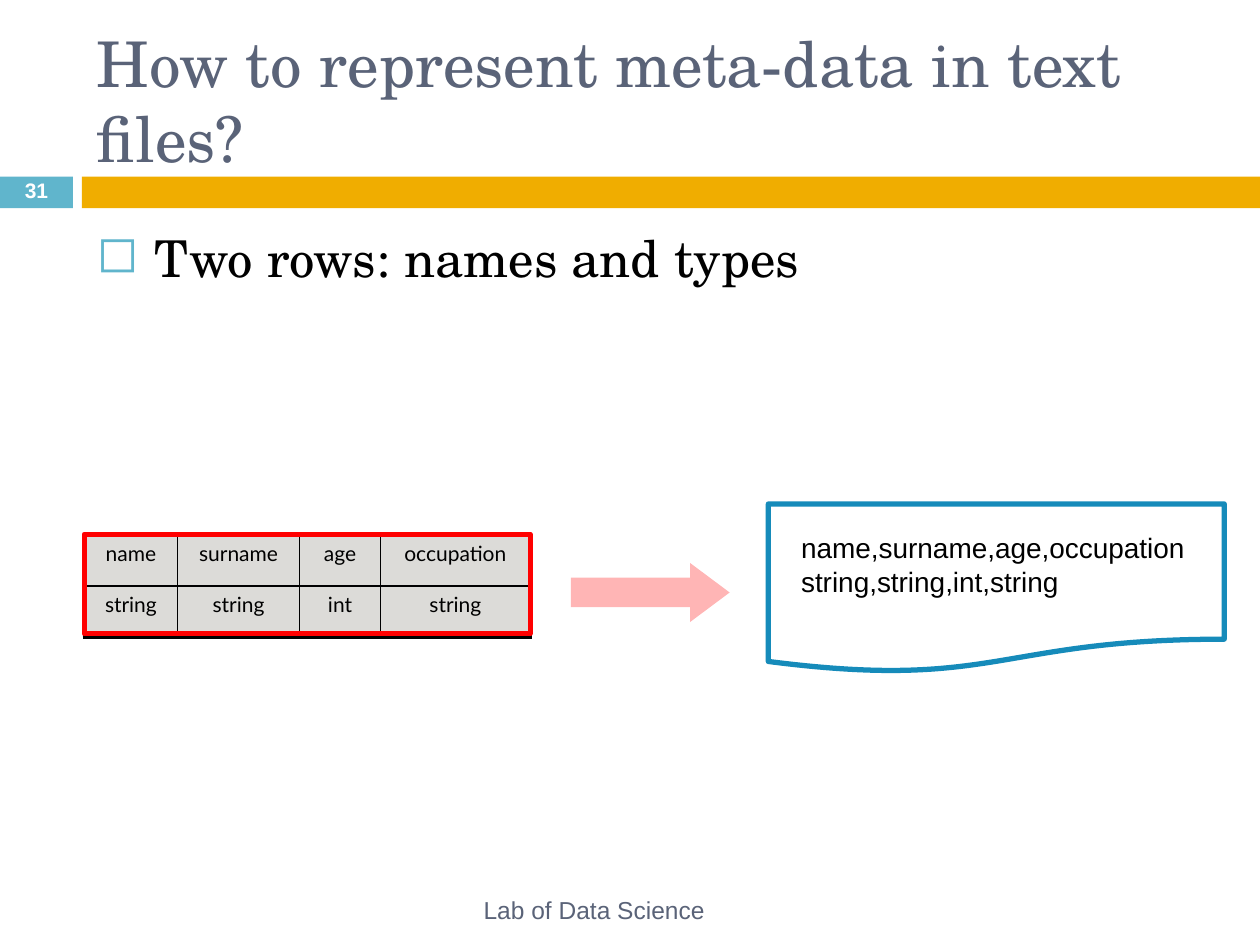
from lxml.etree import SubElement
from pptx import Presentation
from pptx.dml.color import RGBColor
from pptx.enum.shapes import MSO_SHAPE as Shape
from pptx.enum.text import MSO_ANCHOR as Anchor, MSO_AUTO_SIZE as AutoSize, PP_ALIGN as Align
from pptx.oxml import parse_xml
from pptx.oxml.ns import nsdecls, qn
from pptx.util import Cm, Pt

SLATE, BLACK, CYAN, RED = "5A6378", "000000", "60B5CC", "FF0000"
SERIF = "TeX Gyre Schola"
LEFT = 1.7
TABLE_TOP = 10.77
COLUMN_WIDTHS = (1.88, 2.46, 1.63, 3.02)
ROW_HEIGHT = 1.04
ROWS = (("name", "surname", "age", "occupation"),
        ("string", "string", "int", "string"))


def color(value):
    return RGBColor.from_string(value)


def box(left, top, width, height):
    return Cm(left), Cm(top), Cm(width), Cm(height)


def fill_solid(fill, value, opacity=None):
    fill.solid()
    fill.fore_color.rgb = color(value)
    if opacity is not None:
        srgb = fill._xPr.find(".//" + qn("a:srgbClr"))
        SubElement(srgb, qn("a:alpha"), val=str(opacity * 1000))


def write(frame, text, size, font="Arial", ink=BLACK, bold=False,
          align=Align.LEFT, anchor=Anchor.TOP, spacing=None):
    """Put one paragraph per line of text into the frame."""
    frame.word_wrap = True
    frame.auto_size = AutoSize.NONE
    frame.vertical_anchor = anchor
    for index, line in enumerate(text.split("\n")):
        paragraph = frame.add_paragraph() if index else frame.paragraphs[0]
        paragraph.alignment = align
        paragraph.line_spacing = spacing
        run = paragraph.add_run()
        run.text = line
        run.font.name = font
        run.font.size = Pt(size)
        run.font.bold = bold
        run.font.color.rgb = color(ink)


def add_text(slide, area, text, size, **style):
    frame = slide.shapes.add_textbox(*box(*area)).text_frame
    write(frame, text, size, **style)
    return frame


def add_bullet(paragraph, character, ink, indent):
    properties = paragraph._p.get_or_add_pPr()
    properties.set("marL", str(Cm(indent)))
    properties.set("indent", str(-Cm(indent)))
    bullet_color = SubElement(properties, qn("a:buClr"))
    SubElement(bullet_color, qn("a:srgbClr"), val=ink)
    SubElement(properties, qn("a:buChar"), char=character)


def add_shape(slide, kind, area, fill=None, opacity=None, line=None):
    shape = slide.shapes.add_shape(kind, *box(*area))
    shape.shadow.inherit = False
    if fill:
        fill_solid(shape.fill, fill, opacity)
    else:
        shape.fill.background()
    if line:
        shape.line.color.rgb = color(line)
        shape.line.width = Pt(3)
    else:
        shape.line.fill.background()
    return shape


def set_borders(cell, widths):
    """Draw black borders, with widths in points by side: L, R, T, B."""
    properties = cell._tc.get_or_add_tcPr()
    for index, (side, width) in enumerate(widths.items()):
        properties.insert(index, parse_xml(
            f'<a:ln{side} {nsdecls("a")} w="{Pt(width)}"><a:solidFill>'
            f'<a:srgbClr val="{BLACK}"/></a:solidFill></a:ln{side}>'))


def add_metadata_table(slide, area):
    last_row, last_column = len(ROWS) - 1, len(COLUMN_WIDTHS) - 1
    table = slide.shapes.add_table(len(ROWS), len(COLUMN_WIDTHS), *box(*area)).table
    table.first_row = table.horz_banding = False
    for column, width in zip(table.columns, COLUMN_WIDTHS):
        column.width = Cm(width)
    for i, values in enumerate(ROWS):
        table.rows[i].height = Cm(ROW_HEIGHT)
        for j, value in enumerate(values):
            cell = table.cell(i, j)
            write(cell.text_frame, value, 12, font="Lato", align=Align.CENTER)
            fill_solid(cell.fill, "BBB9B3", 50)
            outer = {"L": j == 0, "R": j == last_column, "T": i == 0, "B": i == last_row}
            set_borders(cell, {side: 2.25 if edge else 1 for side, edge in outer.items()})


def add_title(slide, area, text):
    title = slide.shapes.title
    title.left, title.top, title.width, title.height = box(*area)
    write(title.text_frame, text, 36, font=SERIF, ink=SLATE, anchor=Anchor.MIDDLE)


def main():
    presentation = Presentation()
    presentation.slide_width, presentation.slide_height = Cm(25.4), Cm(19.05)
    slide = presentation.slides.add_slide(presentation.slide_layouts[5])

    add_shape(slide, Shape.RECTANGLE, (0, 3.56, 1.47, 0.64), fill=CYAN)
    add_shape(slide, Shape.RECTANGLE, (1.65, 3.56, 23.75, 0.64), fill="F0AD00")
    add_title(slide, (LEFT, 0.64, 22.66, 2.74), "How to represent meta-data in text files?")
    body = add_text(slide, (LEFT, 4.45, 22.66, 12.5), "Two rows: names and types", 29, font=SERIF)
    add_bullet(body.paragraphs[0], "◻", CYAN, 1.17)
    add_text(slide, (4.45, 17.83, 15.06, 1.02), "Lab of Data Science", 14,
             ink=SLATE, align=Align.CENTER, anchor=Anchor.MIDDLE)
    add_text(slide, (0, 3.53, 1.47, 0.69), "31", 12, ink="FFFFFF", bold=True,
             align=Align.CENTER, anchor=Anchor.MIDDLE, spacing=0.8)

    table_area = (LEFT, TABLE_TOP, sum(COLUMN_WIDTHS), ROW_HEIGHT * len(ROWS))
    add_metadata_table(slide, table_area)
    add_shape(slide, Shape.RECTANGLE, (*table_area[:3], 2.01), line=RED)
    add_shape(slide, Shape.FLOWCHART_DOCUMENT, (15.49, 10.16, 9.19, 3.4), line="168BBA")
    add_text(slide, (15.9, 10.57, 9.3, 1.63),
             "name,surname,age,occupation\nstring,string,int,string", 16)
    arrow = add_shape(slide, Shape.RIGHT_ARROW, (11.51, 11.35, 3.2, 1.19), fill=RED, opacity=29)
    arrow.adjustments[1] = 0.67
    presentation.save("out.pptx")


if __name__ == "__main__":
    main()
